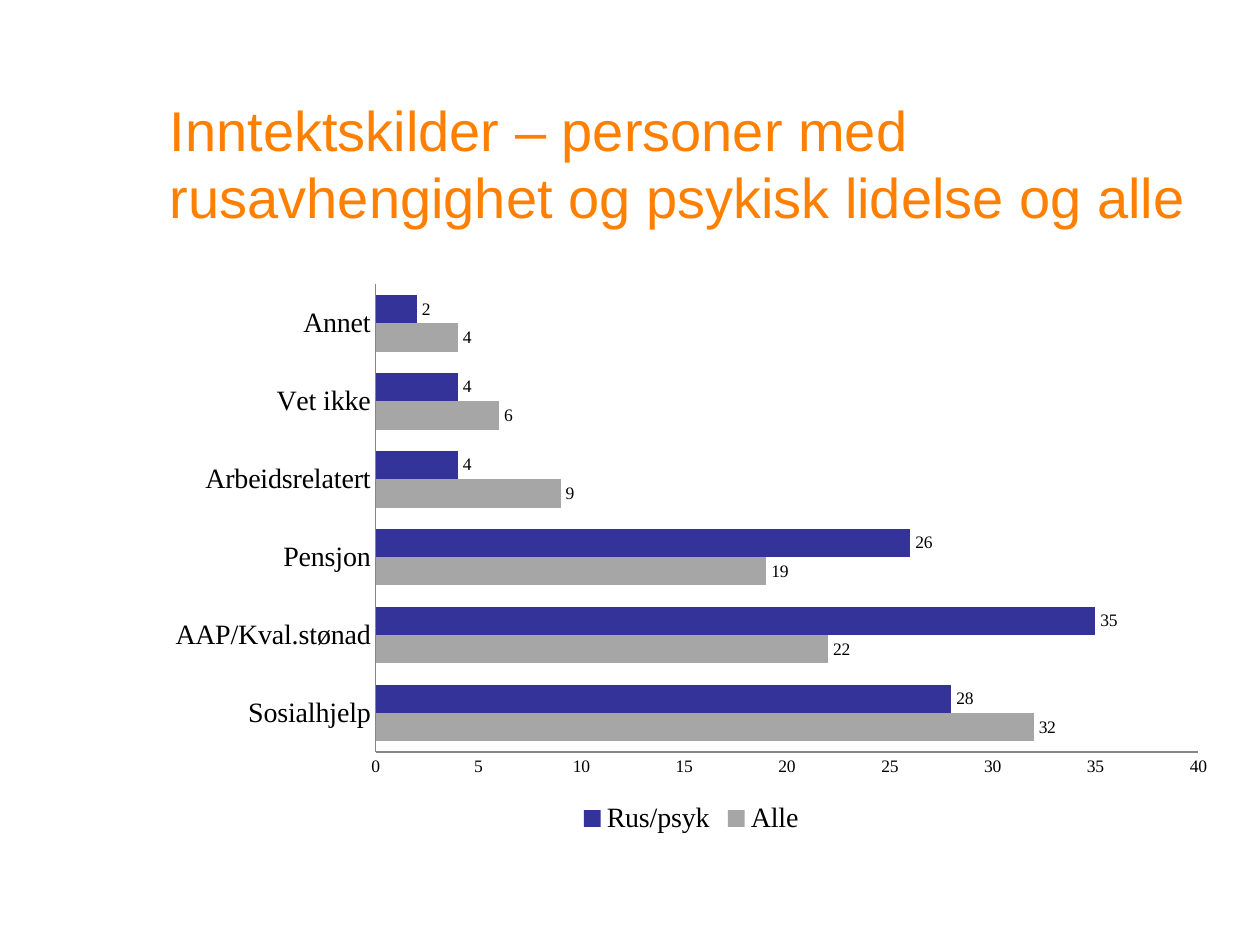
"""Build a slide comparing income sources for two groups in a bar chart."""
from pptx import Presentation
from pptx.chart.data import CategoryChartData
from pptx.dml.color import RGBColor
from pptx.enum.chart import XL_CHART_TYPE, XL_LABEL_POSITION, XL_LEGEND_POSITION, XL_TICK_MARK
from pptx.enum.text import MSO_ANCHOR
from pptx.util import Pt

BAR = XL_CHART_TYPE.BAR_CLUSTERED
OUTSIDE = XL_LABEL_POSITION.OUTSIDE_END
BOTTOM = XL_LEGEND_POSITION.BOTTOM
NO_TICK = XL_TICK_MARK.NONE
MIDDLE = MSO_ANCHOR.MIDDLE

TITLE = "Inntektskilder – personer med rusavhengighet og psykisk lidelse og alle"
SOURCES = ["Sosialhjelp", "AAP/Kval.stønad", "Pensjon", "Arbeidsrelatert", "Vet ikke", "Annet"]
GROUPS = [
    ("Alle", "A6A6A6", [32, 22, 19, 9, 6, 4]),
    ("Rus/psyk", "333399", [28, 35, 26, 4, 4, 2]),
]


def color(value):
    """Turn a hex string into a colour."""
    return RGBColor.from_string(value)


def style_font(font, name, size, value):
    """Set the family, size and colour of a font."""
    font.name = name
    font.size = Pt(size)
    font.color.rgb = color(value)


def add_title(page):
    """Add the slide title."""
    box = page.shapes.add_textbox(Pt(90), Pt(48), Pt(612), Pt(90))
    frame = box.text_frame
    frame.word_wrap = True
    frame.vertical_anchor = MIDDLE
    frame.text = TITLE
    style_font(frame.paragraphs[0].font, "Arial", 32, "FF8000")


def add_income_chart(page):
    """Add the clustered bar chart."""
    data = CategoryChartData(number_format="0")
    data.categories = SOURCES
    for name, _, values in GROUPS:
        data.add_series(name, values)
    chart = page.shapes.add_chart(BAR, Pt(88), Pt(156), Pt(614), Pt(324), data).chart
    chart.has_title = False
    style_font(chart.font, "Times New Roman", 10, "000000")

    chart.has_legend = True
    chart.legend.position = BOTTOM
    chart.legend.include_in_layout = False
    style_font(chart.legend.font, "Times New Roman", 16, "000000")

    for axis, size, width in [(chart.category_axis, 16, 0.75), (chart.value_axis, 10, 1.5)]:
        axis.has_major_gridlines = False
        axis.major_tick_mark = NO_TICK
        axis.minor_tick_mark = NO_TICK
        axis.format.line.color.rgb = color("868686")
        axis.format.line.width = Pt(width)
        style_font(axis.tick_labels.font, "Times New Roman", size, "000000")
    chart.value_axis.minimum_scale = 0
    chart.value_axis.maximum_scale = 40
    chart.value_axis.major_unit = 5

    plot = chart.plots[0]
    plot.gap_width = 75
    plot.overlap = 0
    plot.vary_by_categories = False
    for series, (_, fill, _) in zip(plot.series, GROUPS):
        series.format.fill.solid()
        series.format.fill.fore_color.rgb = color(fill)
        labels = series.data_labels
        labels.show_value = True
        labels.position = OUTSIDE
        style_font(labels.font, "Times New Roman", 10, "000000")


def main():
    """Create and save the deck."""
    deck = Presentation()
    deck.slide_width = Pt(720)
    deck.slide_height = Pt(540)
    page = deck.slides.add_slide(deck.slide_layouts[6])
    add_title(page)
    add_income_chart(page)
    deck.save("out.pptx")


if __name__ == "__main__":
    main()
